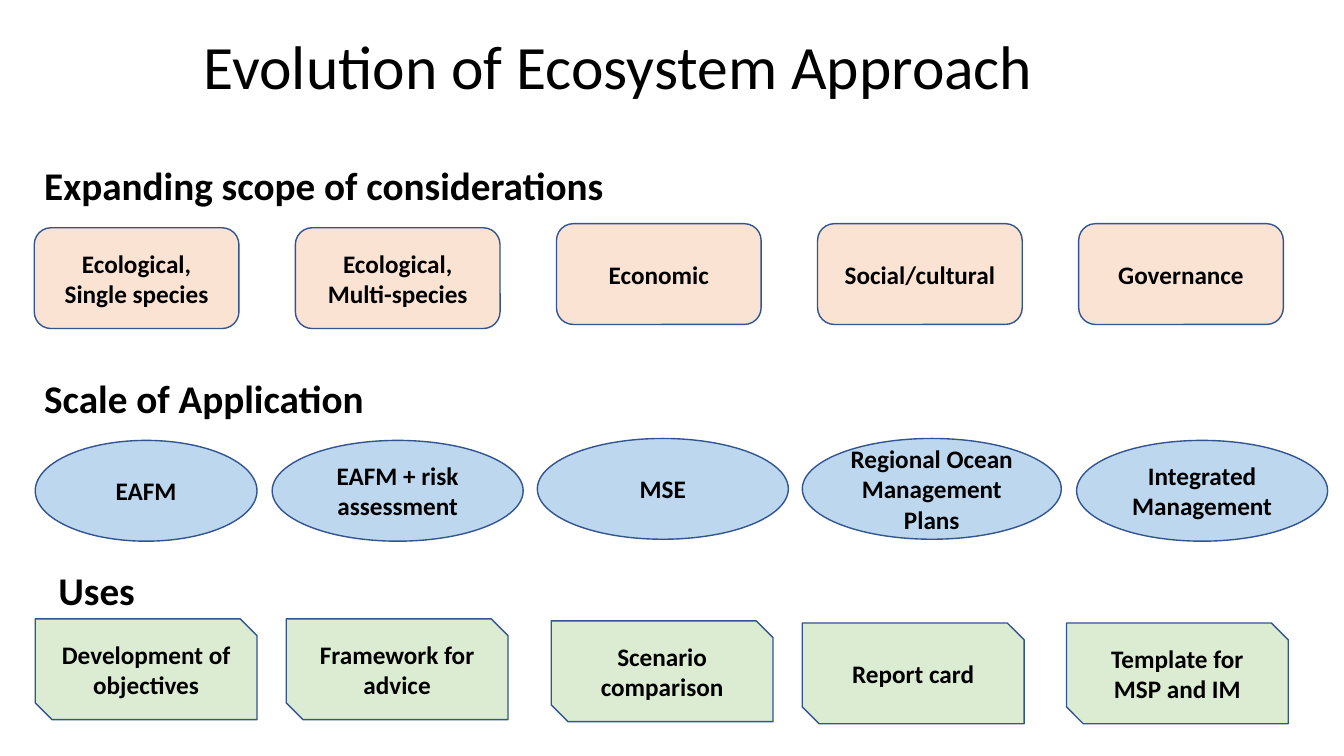
from lxml import etree
from pptx import Presentation
from pptx.dml.color import RGBColor
from pptx.enum import shapes, text
from pptx.oxml.ns import qn
from pptx.util import Pt


def color(hex_value):
    return RGBColor.from_string(hex_value)


def style_text(paragraph, size, bold):
    for run in paragraph.runs:
        run.font.name = "Calibri"
        run.font.size = Pt(size)
        run.font.bold = bold
        run.font.color.rgb = color("000000")


presentation = Presentation()
presentation.slide_width = Pt(960)
presentation.slide_height = Pt(540)
slide = presentation.slides.add_slide(presentation.slide_layouts[5])

title = slide.shapes.title
title.left, title.top, title.width, title.height = Pt(138.2), Pt(-2.2), Pt(828), Pt(104.4)
title.text_frame.text = "Evolution of Ecosystem Approach"
title.text_frame.vertical_anchor = text.MSO_ANCHOR.MIDDLE
title_paragraph = title.text_frame.paragraphs[0]
title_paragraph.alignment = text.PP_ALIGN.LEFT
title_paragraph.line_spacing = 0.9
style_text(title_paragraph, 44, False)

headings = [
    ("Expanding scope of considerations", 24.5, 111.6, 422),
    ("Scale of Application", 24.5, 264.2, 245.5),
    ("Uses", 34.6, 401, 70),
]
for wording, left, top, width in headings:
    heading = slide.shapes.add_textbox(Pt(left), Pt(top), Pt(width), Pt(41))
    heading.text_frame.text = wording
    heading.text_frame.word_wrap = False
    heading.text_frame.auto_size = text.MSO_AUTO_SIZE.SHAPE_TO_FIT_TEXT
    style_text(heading.text_frame.paragraphs[0], 28, True)

preset = shapes.MSO_SHAPE
scope_width, scope_pitch = 146.2, 186.5
use_width = 158.4
rows = [
    (preset.ROUNDED_RECTANGLE, "F8CBAD", 53, [
        (wording, 24.5 + column * scope_pitch, top, scope_width)
        for column, (wording, top) in enumerate([
            ("Ecological, Single species", 162.7),
            ("Ecological, Multi-species", 162.7),
            ("Economic", 159.8),
            ("Social/cultural", 159.8),
            ("Governance", 159.8),
        ])
    ]),
    (preset.OVAL, "BDD7EE", 100, [
        ("EAFM", 25.2, 314.6, 158.4),
        ("EAFM + risk assessment", 194.4, 314.6, 179.3),
        ("MSE", 383.8, 313.2, 179.3),
        ("Regional Ocean Management Plans", 573.1, 313.2, 185),
        ("Integrated Management", 769, 314.6, 179.3),
    ]),
    (preset.SNIP_2_DIAG_RECTANGLE, "C5E0B4", 60, [
        ("Development of objectives", 25.2, 442.1, use_width),
        ("Framework for advice", 204.5, 442.1, use_width),
        ("Scenario comparison", 393.8, 443.5, use_width),
        ("Report card", 573.1, 445, use_width),
        ("Template for MSP and IM", 761.8, 445, use_width),
    ]),
]
for outline, fill, opacity, items in rows:
    for wording, left, top, width in items:
        shape = slide.shapes.add_shape(outline, Pt(left), Pt(top), Pt(width), Pt(72))
        shape.shadow.inherit = False
        shape.fill.solid()
        shape.fill.fore_color.rgb = color(fill)
        if opacity < 100:
            fill_color = shape.fill._xPr.find(qn("a:solidFill"))[0]
            etree.SubElement(fill_color, qn("a:alpha")).set("val", str(opacity * 1000))
        shape.line.color.rgb = color("325491")
        shape.line.width = Pt(1)
        shape.text_frame.text = wording
        shape.text_frame.word_wrap = True
        shape.text_frame.vertical_anchor = text.MSO_ANCHOR.MIDDLE
        paragraph = shape.text_frame.paragraphs[0]
        paragraph.alignment = text.PP_ALIGN.CENTER
        style_text(paragraph, 18, True)

presentation.save("out.pptx")
